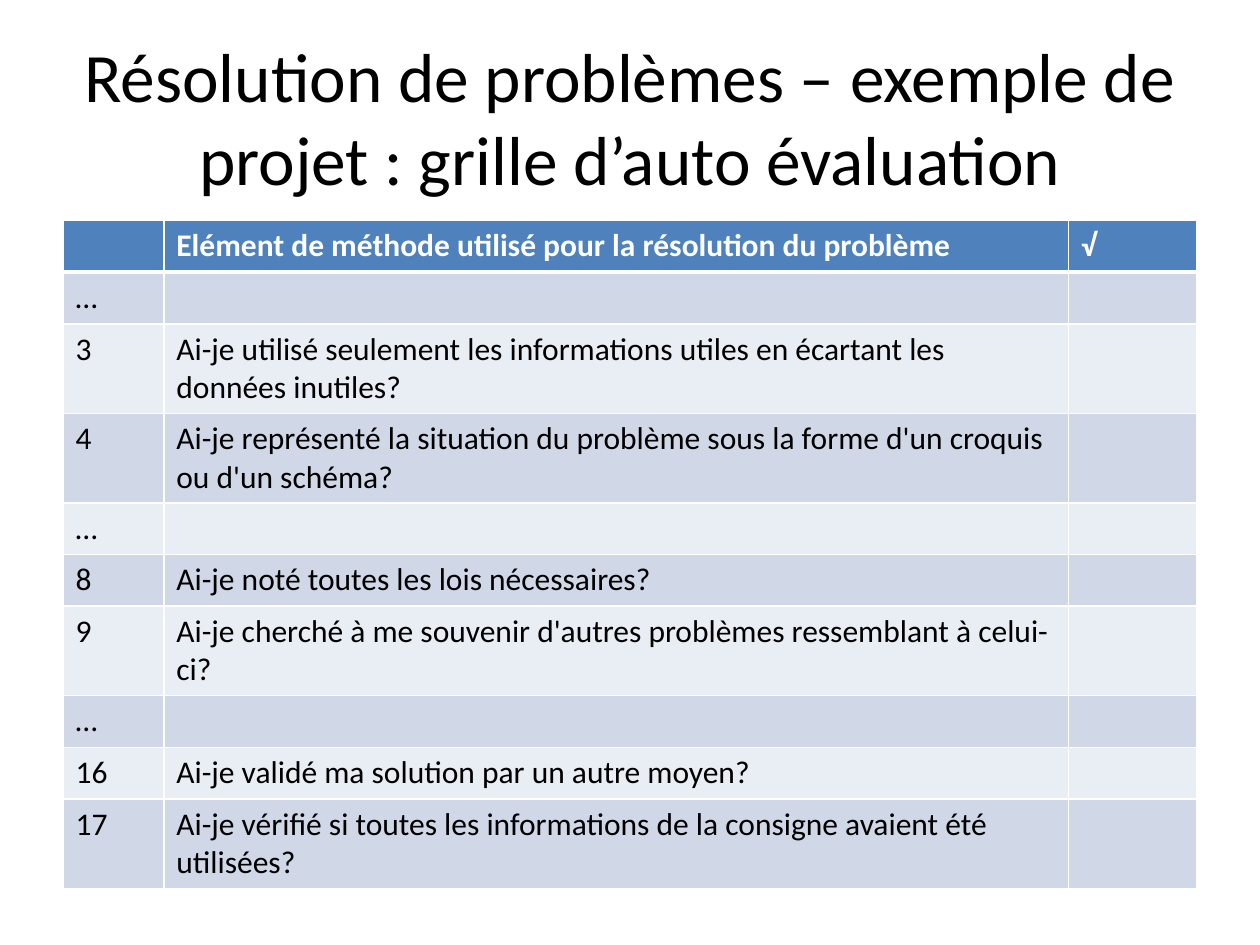
from lxml.etree import SubElement
from pptx import Presentation
from pptx.dml.color import RGBColor
from pptx.enum.text import MSO_ANCHOR, PP_ALIGN
from pptx.oxml.ns import qn
from pptx.util import Inches, Pt

TITLE = "Résolution de problèmes – exemple de projet : grille d’auto évaluation"
HEADER = ("", "Elément de méthode utilisé pour la résolution du problème", "√")
QUESTIONS = [
    ("…", ""),
    ("3", "Ai-je utilisé seulement les informations utiles en écartant les données inutiles?"),
    ("4", "Ai-je représenté la situation du problème sous la forme d'un croquis ou d'un schéma?"),
    ("…", ""),
    ("8", "Ai-je noté toutes les lois nécessaires?"),
    ("9", "Ai-je cherché à me souvenir d'autres problèmes ressemblant à celui-ci?"),
    ("…", ""),
    ("16", "Ai-je validé ma solution par un autre moyen?"),
    ("17", "Ai-je vérifié si toutes les informations de la consigne avaient été utilisées?"),
]
COLUMN_WIDTHS = (0.8, 7.18, 1.02)
ROW_HEIGHT = 0.41

FONT = "Calibri"
BLACK = RGBColor(0x00, 0x00, 0x00)
WHITE = RGBColor(0xFF, 0xFF, 0xFF)
HEADER_BLUE = RGBColor(0x4F, 0x81, 0xBD)
BANDS = (RGBColor(0xD0, 0xD8, 0xE8), RGBColor(0xE9, 0xED, 0xF4))


def add_run(paragraph, text, size, color, bold=False):
    run = paragraph.add_run()
    run.text = text
    run.font.name = FONT
    run.font.size = Pt(size)
    run.font.bold = bold
    run.font.color.rgb = color


def set_borders(cell, widths):
    """Draw white borders; widths maps each side's tag to points."""
    properties = cell._tc.get_or_add_tcPr()
    for tag, width in widths.items():
        line = SubElement(properties, qn(tag), w=str(Pt(width)))
        fill = SubElement(line, qn("a:solidFill"))
        SubElement(fill, qn("a:srgbClr"), val=str(WHITE))


def add_title(slide):
    title = slide.shapes.title
    title.left, title.top = Inches(0.5), Inches(0.3)
    title.width, title.height = Inches(9), Inches(1.25)
    frame = title.text_frame
    frame.word_wrap = True
    frame.vertical_anchor = MSO_ANCHOR.MIDDLE
    paragraph = frame.paragraphs[0]
    paragraph.alignment = PP_ALIGN.CENTER
    add_run(paragraph, TITLE, 39.6, BLACK)


def add_evaluation_grid(slide):
    rows = [HEADER] + [(number, question, "") for number, question in QUESTIONS]
    table = slide.shapes.add_table(
        len(rows), len(COLUMN_WIDTHS), Inches(0.5), Inches(1.75),
        Inches(sum(COLUMN_WIDTHS)), Inches(ROW_HEIGHT * len(rows)),
    ).table
    for column, width in zip(table.columns, COLUMN_WIDTHS):
        column.width = Inches(width)

    for row_index, texts in enumerate(rows):
        table.rows[row_index].height = Inches(ROW_HEIGHT)
        is_header = row_index == 0
        top = 3 if row_index == 1 else 1
        bottom = 3 if is_header else 1
        for column_index, text in enumerate(texts):
            cell = table.cell(row_index, column_index)
            set_borders(cell, {"a:lnL": 1, "a:lnR": 1, "a:lnT": top, "a:lnB": bottom})
            cell.fill.solid()
            cell.fill.fore_color.rgb = HEADER_BLUE if is_header else BANDS[(row_index - 1) % 2]
            if text:
                add_run(cell.text_frame.paragraphs[0], text, 18,
                        WHITE if is_header else BLACK, bold=is_header)


def main():
    presentation = Presentation()
    presentation.slide_width, presentation.slide_height = Inches(10), Inches(7.5)
    slide = presentation.slides.add_slide(presentation.slide_layouts[5])
    add_title(slide)
    add_evaluation_grid(slide)
    presentation.save("out.pptx")


if __name__ == "__main__":
    main()
